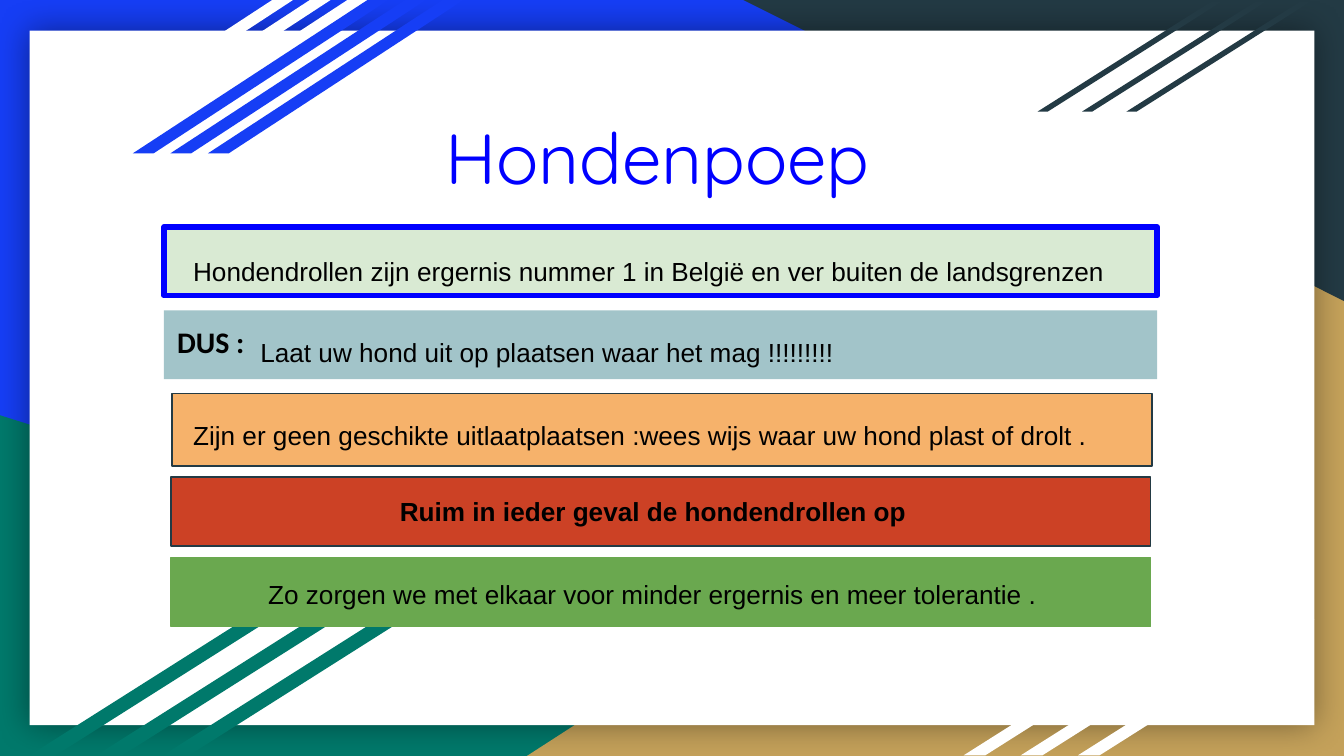
"""Build the Hondenpoep slide with its striped frame and five message bars."""
from lxml.etree import SubElement
from pptx import Presentation
from pptx.dml.color import RGBColor
from pptx.enum.shapes import MSO_SHAPE as Kind
from pptx.enum.text import MSO_ANCHOR as Anchor, PP_ALIGN as Align
from pptx.oxml.ns import qn
from pptx.util import Cm, Pt

BLUE = RGBColor(0x16, 0x3E, 0xF5)
PURE = RGBColor(0x00, 0x00, 0xFF)
TEAL = RGBColor(0x00, 0x79, 0x6B)
SAND = RGBColor(0xC4, 0xA1, 0x5A)
NAVY = RGBColor(0x23, 0x3A, 0x44)
WHITE = RGBColor(0xFF, 0xFF, 0xFF)
BLACK = RGBColor(0x00, 0x00, 0x00)
MIST = RGBColor(0xA2, 0xC4, 0xC9)
MINT = RGBColor(0xD9, 0xEA, 0xD3)
PEACH = RGBColor(0xF6, 0xB2, 0x6B)
RED = RGBColor(0xCC, 0x41, 0x25)
GREEN = RGBColor(0x6A, 0xA8, 0x4F)

STRIPES = [
    (0.71, 0.71, 0, 4.83, 2.9, 1.53, WHITE),
    (2.51, 0.71, 0, 4.83, 2.9, 1.53, BLUE),
    (19.61, 0.84, 0.03, 3.48, 2.08, 1.58, NAVY),
    (18.21, 1.08, 11.71, 4.47, 2.57, 1.58, WHITE),
    (0.56, 1.26, 11.28, 5.23, 3, 1.58, TEAL),
]


def add_form(shapes, kind, box, fill, line=None, width=0.75):
    """Add a filled preset shape, outlined only when a line colour is given."""
    form = shapes.add_shape(kind, *map(Cm, box))
    form.shadow.inherit = False
    form.fill.solid()
    form.fill.fore_color.rgb = fill
    if line is None:
        form.line.fill.background()
    else:
        form.line.color.rgb = line
        form.line.width = Pt(width)
    return form


def add_stripes(shapes, left, step, top, width, height, slant, fill):
    """Add a group of three slanted stripes, the rightmost at the back."""
    group = shapes.add_group_shape()
    for i in (2, 1, 0):
        box = (left + i * step, top, width, height)
        bar = add_form(group.shapes, Kind.PARALLELOGRAM, box, fill)
        bar.adjustments[0] = slant


def add_glow(form):
    """Give a shape a soft dark shadow on all sides."""
    glow = form._element.spPr.find(qn("a:effectLst"))
    outer = SubElement(glow, qn("a:outerShdw"), blurRad=str(Pt(18)), dist="0",
                       dir="0", algn="ctr", rotWithShape="0")
    tint = SubElement(outer, qn("a:srgbClr"), val="000000")
    SubElement(tint, qn("a:alpha"), val="40000")


def write(form, text, size=14, font="Arial", color=BLACK, bold=False,
          align=Align.LEFT, anchor=Anchor.TOP, right=0.25):
    """Put one formatted paragraph in a shape."""
    frame = form.text_frame
    frame.word_wrap = True
    frame.vertical_anchor = anchor
    frame.margin_left = frame.margin_top = frame.margin_bottom = Cm(0.25)
    frame.margin_right = Cm(right)
    para = frame.paragraphs[0]
    para.text = text
    para.alignment = align
    para.font.size = Pt(size)
    para.font.name = font
    para.font.bold = bold
    para.font.color.rgb = color


def add_label(shapes, box, text, **style):
    """Add a text box with one paragraph."""
    write(shapes.add_textbox(*map(Cm, box)), text, **style)


def add_frame(shapes):
    """Add the coloured corners, the white panel and the stripes."""
    tri = Kind.RIGHT_TRIANGLE
    add_form(shapes, tri, (0, 7.85, 20.47, 6.44), TEAL)
    sand = add_form(shapes, tri, (9.96, 4.32, 15.44, 9.97), SAND)
    sand._element.spPr.find(qn("a:xfrm")).set("flipH", "1")
    add_form(shapes, tri, (14.05, 0, 11.35, 5.69), NAVY).rotation = 180
    add_glow(add_form(shapes, Kind.RECTANGLE, (0.56, 0.58, 24.28, 13.13), WHITE))
    for stripe in STRIPES:
        add_stripes(shapes, *stripe)


def add_title(shapes):
    """Place the title in front of the frame."""
    title = shapes.title
    shapes._spTree.append(title._element)
    title.left, title.top, title.width, title.height = map(
        Cm, (5.16, 1.91, 14.88, 2.08))
    write(title, "Hondenpoep", 38, "Quicksand", PURE, align=Align.CENTER,
          anchor=Anchor.MIDDLE, right=0.6)


def add_bars(shapes):
    """Add the five message bars with their texts."""
    rect = Kind.RECTANGLE
    dus = add_form(shapes, rect, (3.1, 5.87, 18.77, 1.3), MIST)
    write(dus, "DUS :", 16, "Calibri", bold=True)
    add_form(shapes, rect, (3.1, 4.29, 18.77, 1.3), MINT, PURE, 3)
    add_label(shapes, (3.4, 4.57, 18.36, 0.84),
              "Hondendrollen zijn ergernis nummer 1 in België en ver buiten de landsgrenzen")
    walk = add_form(shapes, rect, (4.67, 6.1, 16.69, 0.84), MIST)
    write(walk, "Laat uw hond uit op plaatsen waar het mag !!!!!!!!!")
    add_form(shapes, rect, (3.25, 7.44, 18.52, 1.37), PEACH, NAVY)
    add_label(shapes, (3.4, 7.67, 18.24, 1.07),
              "Zijn er geen geschikte uitlaatplaatsen :wees wijs waar uw hond plast of drolt .")
    add_form(shapes, rect, (3.23, 9.02, 18.52, 1.3), RED, NAVY)
    add_label(shapes, (3.43, 9.12, 18.11, 1.07),
              "Ruim in ieder geval de hondendrollen op",
              bold=True, align=Align.CENTER, right=0.53)
    add_form(shapes, rect, (3.23, 10.54, 18.52, 1.3), GREEN, GREEN)
    add_label(shapes, (3.43, 10.69, 17.81, 1.07),
              "Zo zorgen we met elkaar voor minder ergernis en meer tolerantie .",
              align=Align.CENTER)


def main():
    """Build and save the slide."""
    deck = Presentation()
    deck.slide_width, deck.slide_height = Cm(25.4), Cm(14.29)
    slide = deck.slides.add_slide(deck.slide_layouts[5])
    slide.background.fill.solid()
    slide.background.fill.fore_color.rgb = BLUE
    add_frame(slide.shapes)
    add_title(slide.shapes)
    add_bars(slide.shapes)
    deck.save("out.pptx")


if __name__ == "__main__":
    main()
